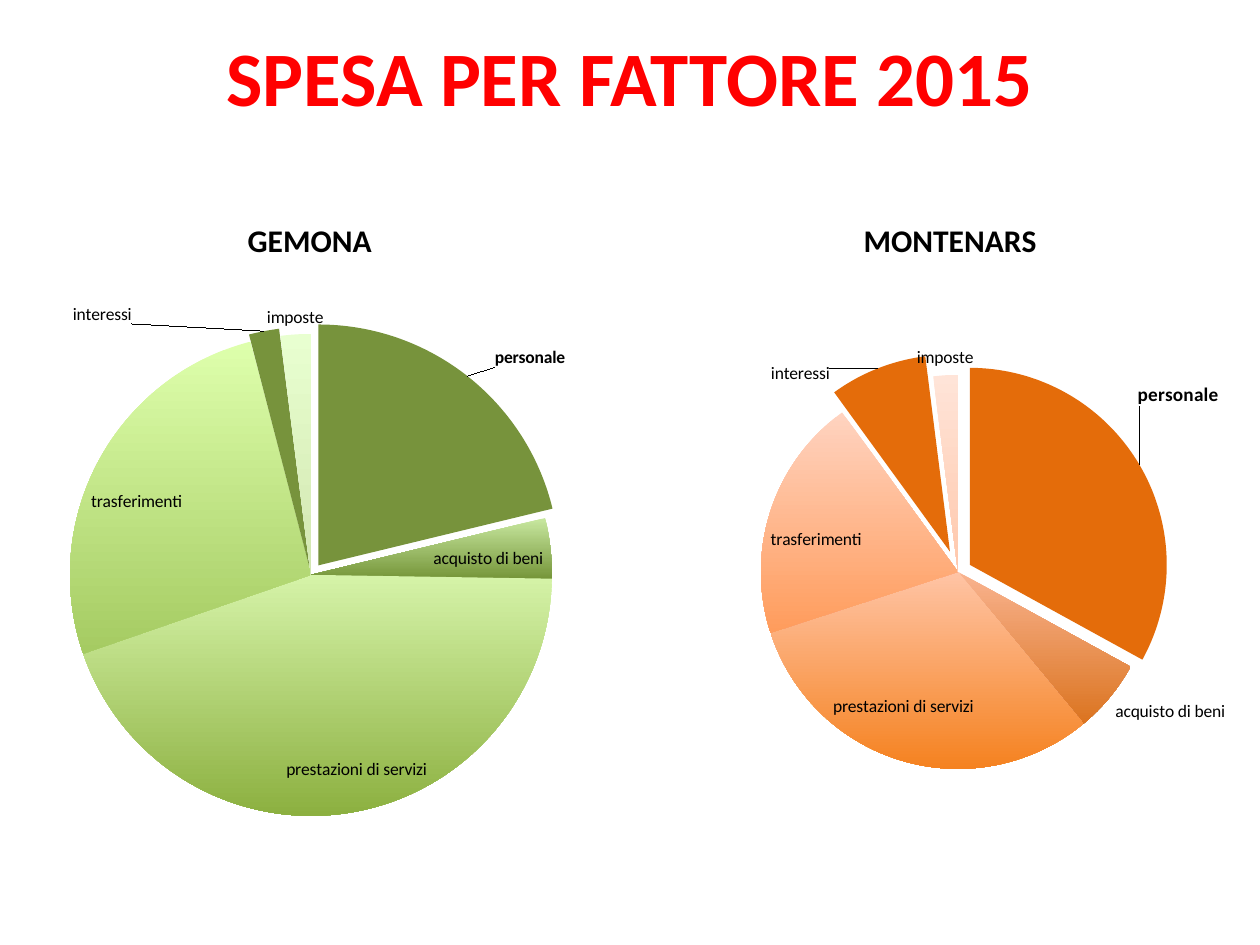
import pptx
import pptx.chart.data
import pptx.dml.color
import pptx.enum.chart
import pptx.enum.text
import pptx.util

PX = 914400 // 126
C = "http://schemas.openxmlformats.org/drawingml/2006/chart"
A = "http://schemas.openxmlformats.org/drawingml/2006/main"
FACTORS = ["personale", "acquisto di beni", "prestazioni di servizi", "canoni",
           "trasferimenti", "interessi", "imposte", "oneri extra"]


def color(hex_code):
    return pptx.dml.color.RGBColor.from_string(hex_code)


def chart_xml(body):
    """Parse one chart element given without namespace declarations."""
    return pptx.oxml.parse_xml(body.replace(">", f' xmlns:c="{C}" xmlns:a="{A}">', 1))


def manual_layout(kind, **values):
    parts = "".join(f'<c:{key} val="{value}"/>' for key, value in values.items())
    target = '<c:layoutTarget val="inner"/>' if kind == "plot" else ""
    modes = "" if kind == "label" else '<c:xMode val="edge"/><c:yMode val="edge"/>'
    return f"<c:layout><c:manualLayout>{target}{modes}{parts}</c:manualLayout></c:layout>"


def label_xml(position, size, bold=0):
    return (f'<c:txPr><a:bodyPr/><a:p><a:pPr><a:defRPr sz="{size * 100}" b="{bold}"/></a:pPr>'
            f'<a:endParaRPr/></a:p></c:txPr><c:dLblPos val="{position}"/>'
            '<c:showLegendKey val="0"/><c:showVal val="0"/><c:showCatName val="1"/>'
            '<c:showSerName val="0"/><c:showPercent val="0"/><c:showBubbleSize val="0"/>')


class Deck:
    font = "Calibri"
    label_size = 10

    def __init__(self, width, height):
        self.prs = pptx.Presentation()
        self.prs.slide_width, self.prs.slide_height = width * PX, height * PX
        self.slide = self.prs.slides.add_slide(self.prs.slide_layouts[6])

    def style(self, font, size, hex_code, bold):
        font.name, font.size, font.bold = self.font, pptx.util.Pt(size), bold
        font.color.rgb = color(hex_code)

    def heading(self, text, x, y, w, h):
        frame = self.slide.shapes.add_textbox(x * PX, y * PX, w * PX, h * PX).text_frame
        frame.word_wrap = True
        frame.vertical_anchor = pptx.enum.text.MSO_ANCHOR.MIDDLE
        frame.text = text
        frame.paragraphs[0].alignment = pptx.enum.text.PP_ALIGN.CENTER
        self.style(frame.paragraphs[0].runs[0].font, 44, "FF0000", True)

    def pie(self, town, box, title_at, circle, shares, fills, explosions, labels):
        x, y, w, h = box
        data = pptx.chart.data.CategoryChartData(number_format="0")
        data.categories = FACTORS
        data.add_series("Series 1", shares)
        chart = self.slide.shapes.add_chart(pptx.enum.chart.XL_CHART_TYPE.PIE, x * PX, y * PX,
                                            w * PX, h * PX, data).chart
        self.style(chart.font, self.label_size, "000000", False)
        chart.has_legend = False
        plot = chart.plots[0]
        plot.vary_by_categories = True

        # Town name
        chart.has_title = True
        title = chart.chart_title
        title.text_frame.text = town
        self.style(title.text_frame.paragraphs[0].runs[0].font, 18, "000000", True)
        title.include_in_layout = False
        for old in title._element.findall(f"{{{C}}}layout"):
            title._element.remove(old)
        place = manual_layout("title", x=title_at[0] / w, y=title_at[1] / h)
        title._element.find(f"{{{C}}}tx").addnext(chart_xml(place))

        # Circle, given by centre and radius within the chart
        cx, cy, radius = circle
        area = plot._element.getparent()
        for old in area.findall(f"{{{C}}}layout"):
            area.remove(old)
        area.insert(0, chart_xml(manual_layout(
            "plot", x=(cx - radius) / w, y=(cy - radius) / h,
            w=2 * radius / w, h=2 * radius / h)))

        # Slices
        series = plot.series[0]
        for index, shades in enumerate(fills):
            fill = series.points[index].format.fill
            if len(shades) == 1:
                fill.solid()
                fill.fore_color.rgb = color(shades[0])
            else:
                fill.gradient()
                fill.gradient_angle = 270
                for stop, shade in zip(fill.gradient_stops, shades):
                    stop.color.rgb = color(shade)
        for slice_xml in series._element.findall(f"{{{C}}}dPt"):
            index_xml = slice_xml.find(f"{{{C}}}idx")
            amount = explosions.get(int(index_xml.get("val")))
            if amount:
                index_xml.addnext(chart_xml(f'<c:explosion val="{amount}"></c:explosion>'))

        # Slice labels: None hides one, otherwise position, shift in px, size and weight
        items = ""
        for index, label in enumerate(labels):
            if label is None:
                content = '<c:delete val="1"/>'
            else:
                position, dx, dy, size, bold = label
                shift = manual_layout("label", x=dx / w, y=dy / h) if dx or dy else ""
                content = shift + label_xml(position, size, bold)
            items += f'<c:dLbl><c:idx val="{index}"/>{content}</c:dLbl>'
        series._element.find(f"{{{C}}}cat").addprevious(chart_xml(
            f'<c:dLbls>{items}<c:numFmt formatCode="0.00%" sourceLinked="0"/>'
            f'{label_xml("outEnd", self.label_size)}<c:showLeaderLines val="1"/></c:dLbls>'))


def main():
    deck = Deck(1260, 945)
    deck.heading("SPESA PER FATTORE 2015", 63, -3, 1134, 158)
    inside = ("inEnd", 0, 0, 10, 0)
    outside = ("outEnd", 0, 0, 10, 0)

    deck.pie("GEMONA", (0, 195, 620, 662), (242, 18), (311, 380, 241),
             [21, 4, 44, 0, 26, 2, 2, 0],
             [["77933C"], ["C8E8A0", "76963A"], ["D5F3A8", "8CB040"], ["9BC454"],
              ["DEFFAC", "A5CB62"], ["77933C"], ["E8FFD0", "D2E6B0"], ["E8FFD0"]],
             {0: 5, 5: 3},
             [("outEnd", 23, -3, 10, 1), inside, ("inEnd", 79, -26, 10, 0), outside,
              ("inEnd", -14, 27, 10, 0), ("outEnd", -131, 0, 10, 0), outside, None])

    deck.pie("MONTENARS", (640, 195, 620, 662), (218, 18), (318, 377, 197),
             [33, 6, 31, 0, 20, 8, 2, 0],
             [["E46C0A"], ["F9B38F", "DB7420"], ["FFC4A5", "F58220"], ["FFA060"],
              ["FFD3C0", "FF9C5C"], ["E46C0A"], ["FFE4D8", "FFC8AC"], ["FFE4D8"]],
             {0: 7, 5: 11},
             [("outEnd", -8, -54, 11, 1), outside, ("inEnd", -72, -37, 10, 0), None,
              ("inEnd", -7, 17, 10, 0), ("outEnd", -45, 22, 10, 0), outside, outside])

    deck.prs.save("out.pptx")


if __name__ == "__main__":
    main()
